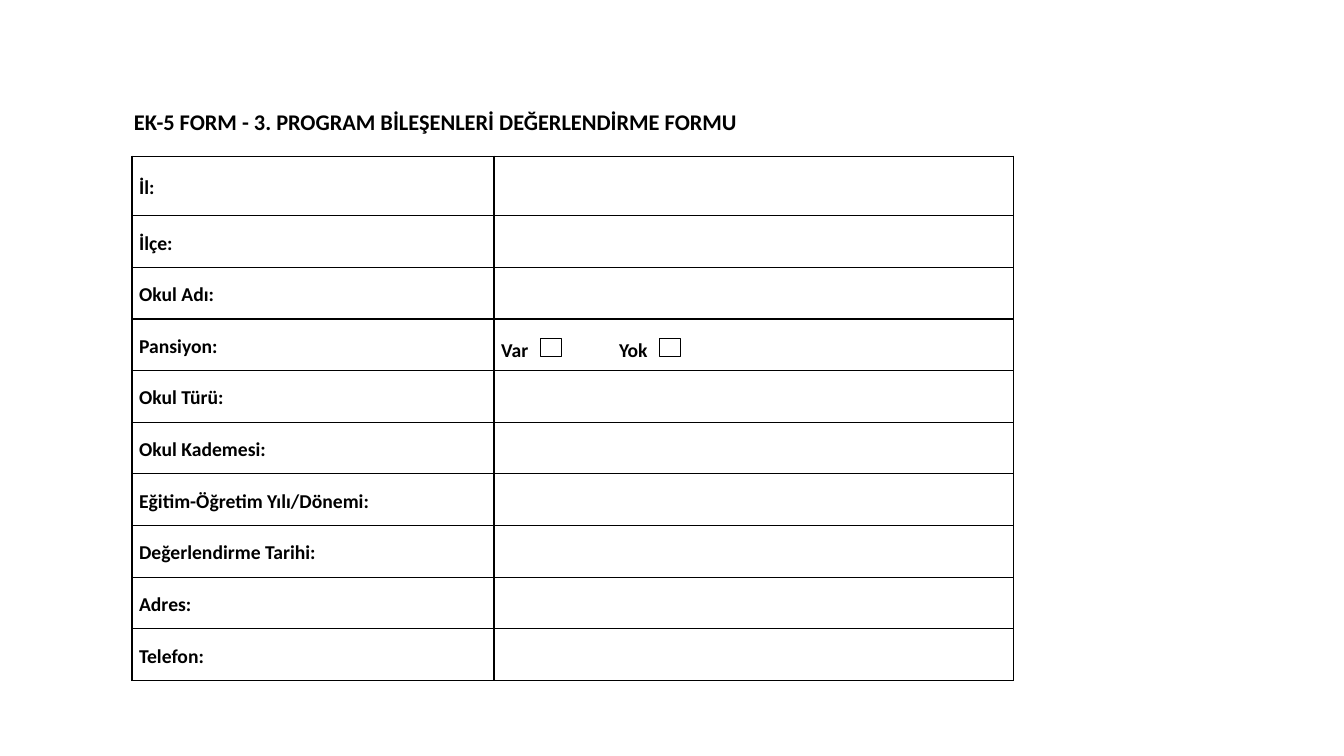
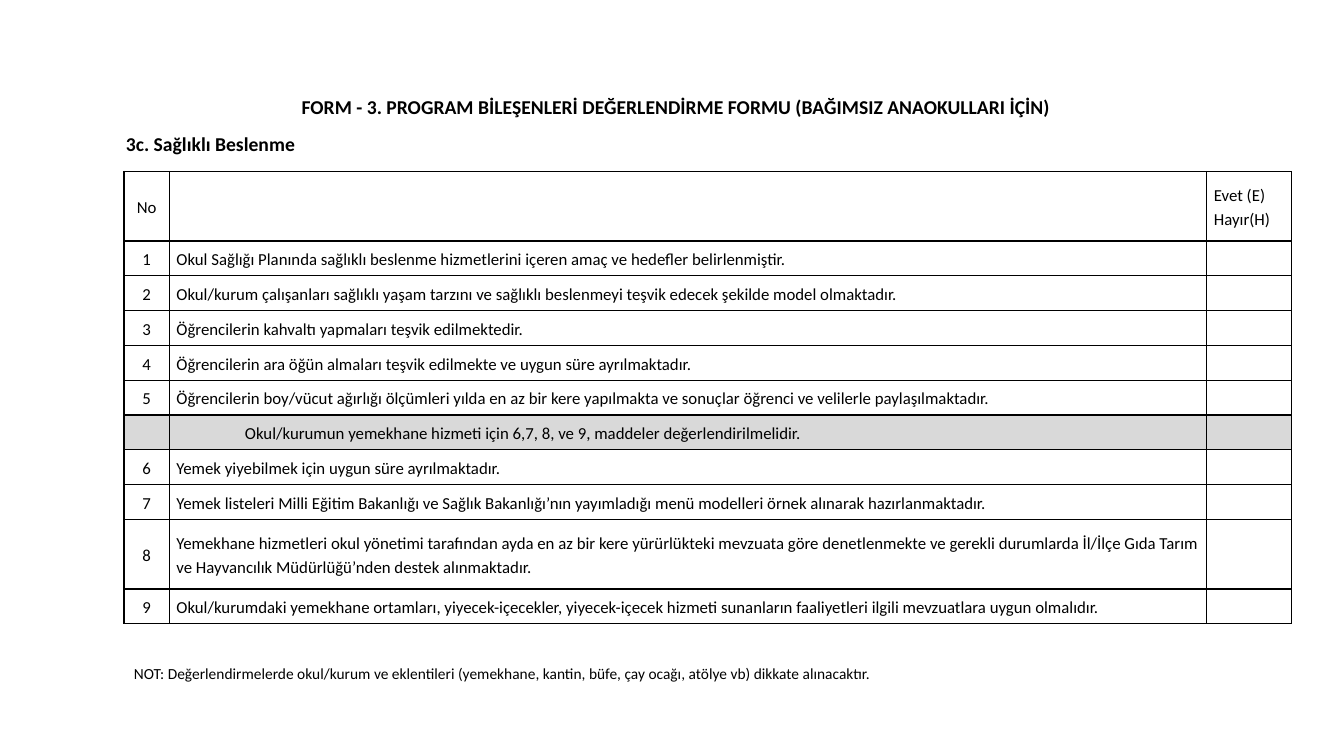
"""Build the two programme evaluation form slides."""
from lxml import etree
from pptx import Presentation
from pptx.dml.color import RGBColor
from pptx.enum.shapes import MSO_SHAPE as Shape
from pptx.enum.text import MSO_ANCHOR as Anchor, MSO_AUTO_SIZE as AutoSize, PP_ALIGN as Align
from pptx.oxml.ns import qn
from pptx.util import Inches, Pt

COLORS = {"text": "000000", "line": "000000", "paper": "FFFFFF", "band": "D9D9D9"}
FONT = "Calibri"
CELL_MARGIN = 0.07
LINE_SPACING = 1.15

SCHOOL_FIELDS = [
    "İl:", "İlçe:", "Okul Adı:", "Pansiyon:", "Okul Türü:", "Okul Kademesi:",
    "Eğitim-Öğretim Yılı/Dönemi:", "Değerlendirme Tarihi:", "Adres:", "Telefon:",
]
GENERAL_ITEMS = [
    "Okul Sağlığı Planında sağlıklı beslenme hizmetlerini içeren amaç ve hedefler belirlenmiştir.",
    "Okul/kurum çalışanları sağlıklı yaşam tarzını ve sağlıklı beslenmeyi teşvik edecek şekilde "
    "model olmaktadır.",
    "Öğrencilerin kahvaltı yapmaları teşvik edilmektedir.",
    "Öğrencilerin ara öğün almaları teşvik edilmekte ve uygun süre ayrılmaktadır.",
    "Öğrencilerin boy/vücut ağırlığı ölçümleri yılda en az bir kere yapılmakta ve sonuçlar öğrenci "
    "ve velilerle paylaşılmaktadır.",
]
CANTEEN_HEADING = "Okul/kurumun yemekhane hizmeti için 6,7, 8, ve 9, maddeler değerlendirilmelidir."
CANTEEN_ITEMS = [
    "Yemek yiyebilmek için uygun süre ayrılmaktadır.",
    "Yemek listeleri Milli Eğitim Bakanlığı ve Sağlık Bakanlığı’nın yayımladığı menü modelleri "
    "örnek alınarak hazırlanmaktadır.",
    "Yemekhane hizmetleri okul yönetimi tarafından ayda en az bir kere yürürlükteki mevzuata göre "
    "denetlenmekte ve gerekli durumlarda İl/İlçe Gıda Tarım ve Hayvancılık Müdürlüğü’nden destek "
    "alınmaktadır.",
    "Okul/kurumdaki yemekhane ortamları, yiyecek-içecekler, yiyecek-içecek hizmeti sunanların "
    "faaliyetleri ilgili mevzuatlara uygun olmalıdır.",
]


def color(name):
    """Return the named palette colour."""
    return RGBColor.from_string(COLORS[name])


def add_run(paragraph, text, size, bold=False):
    """Append one styled run to a paragraph."""
    run = paragraph.add_run()
    run.text = text
    run.font.name = FONT
    run.font.size = Pt(size)
    run.font.bold = bold
    run.font.color.rgb = color("text")


def add_text(slide, box, text, size, bold=False, align=Align.LEFT):
    """Add a one-paragraph text box."""
    frame = slide.shapes.add_textbox(*map(Inches, box)).text_frame
    frame.word_wrap = True
    frame.auto_size = AutoSize.SHAPE_TO_FIT_TEXT
    frame.vertical_anchor = Anchor.MIDDLE
    paragraph = frame.paragraphs[0]
    paragraph.alignment = align
    add_run(paragraph, text, size, bold)


def set_borders(cell, width=1):
    """Draw a solid line on all four sides of a cell."""
    properties = cell._tc.get_or_add_tcPr()
    for side in ("lnL", "lnR", "lnT", "lnB"):
        line = etree.SubElement(properties, qn(f"a:{side}"), w=str(Pt(width)))
        fill = etree.SubElement(line, qn("a:solidFill"))
        etree.SubElement(fill, qn("a:srgbClr"), val=COLORS["line"])


def add_grid(slide, left, top, widths, heights):
    """Add an unfilled, fully bordered table and return it."""
    box = (left, top, sum(widths), sum(heights))
    table = slide.shapes.add_table(len(heights), len(widths), *map(Inches, box)).table
    table.first_row = table.horz_banding = False
    for column, width in zip(table.columns, widths):
        column.width = Inches(width)
    for row, height in zip(table.rows, heights):
        row.height = Inches(height)
    for cell in table.iter_cells():
        cell.margin_left = cell.margin_right = Inches(CELL_MARGIN)
        cell.margin_top = cell.margin_bottom = 0
        cell.vertical_anchor = Anchor.MIDDLE
        set_borders(cell)
        cell.fill.background()
    return table


def write_cell(cell, lines, size, bold=False, align=Align.LEFT):
    """Write one paragraph per line into a cell."""
    frame = cell.text_frame
    for index, line in enumerate(lines):
        paragraph = frame.add_paragraph() if index else frame.paragraphs[0]
        paragraph.alignment = align
        paragraph.line_spacing = LINE_SPACING
        add_run(paragraph, line, size, bold)


def write_choices(cell, tab_position):
    """Write the two check box labels, parted by a tab stop."""
    paragraph = cell.text_frame.paragraphs[0]
    tabs = etree.SubElement(paragraph._p.get_or_add_pPr(), qn("a:tabLst"))
    etree.SubElement(tabs, qn("a:tab"), pos=str(Inches(tab_position)), algn="l")
    paragraph.line_spacing = LINE_SPACING
    add_run(paragraph, "Var", 14, bold=True)
    add_run(paragraph, "\t", 21)
    add_run(paragraph, "Yok", 14, bold=True)


def add_check_box(slide, left, top):
    """Add an empty check box."""
    shape = slide.shapes.add_shape(Shape.RECTANGLE, *map(Inches, (left, top, 0.21, 0.18)))
    shape.shadow.inherit = False
    shape.fill.solid()
    shape.fill.fore_color.rgb = color("paper")
    shape.line.color.rgb = color("line")
    shape.line.width = Pt(0.75)


def build_school_slide(slide):
    """Fill the slide that records the school details."""
    add_text(slide, (1.23, 1.02, 9.37, 0.37),
             "EK-5 FORM - 3. PROGRAM BİLEŞENLERİ DEĞERLENDİRME FORMU", 16, bold=True)
    first_height, table_height = 0.59, 5.2
    other_count = len(SCHOOL_FIELDS) - 1
    heights = [first_height] + [(table_height - first_height) / other_count] * other_count
    table = add_grid(slide, 1.31, 1.55, [3.59, 5.15], heights)
    for row, field in enumerate(SCHOOL_FIELDS):
        write_cell(table.cell(row, 0), [field], 14, bold=True)
    write_choices(table.cell(SCHOOL_FIELDS.index("Pansiyon:"), 1), 1.17)
    for left in (5.36, 6.54):
        add_check_box(slide, left, 3.36)


def build_nutrition_slide(slide):
    """Fill the slide that holds the nutrition checklist."""
    add_text(slide, (0.68, 0.89, 12.05, 0.34),
             "FORM - 3. PROGRAM BİLEŞENLERİ DEĞERLENDİRME FORMU (BAĞIMSIZ ANAOKULLARI İÇİN)",
             14, bold=True, align=Align.CENTER)
    add_text(slide, (1.15, 1.26, 11.42, 0.34), "3c. Sağlıklı Beslenme", 14, bold=True)

    items = GENERAL_ITEMS + CANTEEN_ITEMS
    band_row = len(GENERAL_ITEMS) + 1
    line_counts = [2, 1, 1, 1, 1, 1, 1, 1, 1, 2, 1]
    line_height = 4.49 / sum(line_counts)
    table = add_grid(slide, 1.23, 1.7, [0.45, 10.29, 0.84],
                     [count * line_height for count in line_counts])
    write_cell(table.cell(0, 0), ["No"], 12, align=Align.CENTER)
    write_cell(table.cell(0, 2), ["Evet (E)", "Hayır(H)"], 12)
    for number, item in enumerate(items, start=1):
        row = number if number < band_row else number + 1
        write_cell(table.cell(row, 0), [str(number)], 12, align=Align.CENTER)
        write_cell(table.cell(row, 1), [item], 12)

    heading = table.cell(band_row, 1)
    write_cell(heading, [CANTEEN_HEADING], 12)
    heading.text_frame.paragraphs[0]._p.get_or_add_pPr().set("marL", str(Inches(0.68)))
    for cell in table.rows[band_row].cells:
        cell.fill.solid()
        cell.fill.fore_color.rgb = color("band")

    add_text(slide, (1.23, 6.53, 11.65, 0.29),
             "NOT: Değerlendirmelerde okul/kurum ve eklentileri (yemekhane, kantin, büfe, çay ocağı, "
             "atölye vb) dikkate alınacaktır.", 11)


def main():
    """Create and save the presentation."""
    presentation = Presentation()
    presentation.slide_width = Inches(13.33)
    presentation.slide_height = Inches(7.5)
    blank = presentation.slide_layouts[6]
    for build in (build_school_slide, build_nutrition_slide):
        build(presentation.slides.add_slide(blank))
    presentation.save("out.pptx")


if __name__ == "__main__":
    main()
